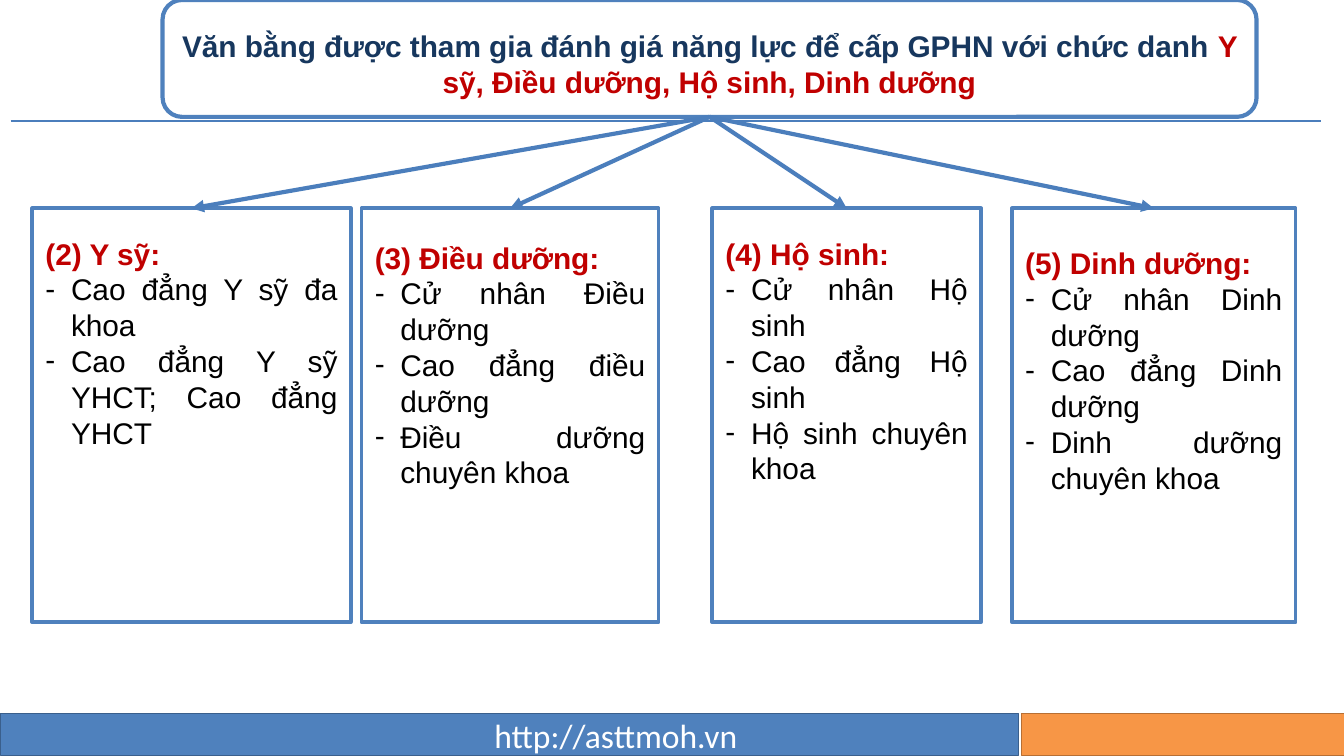
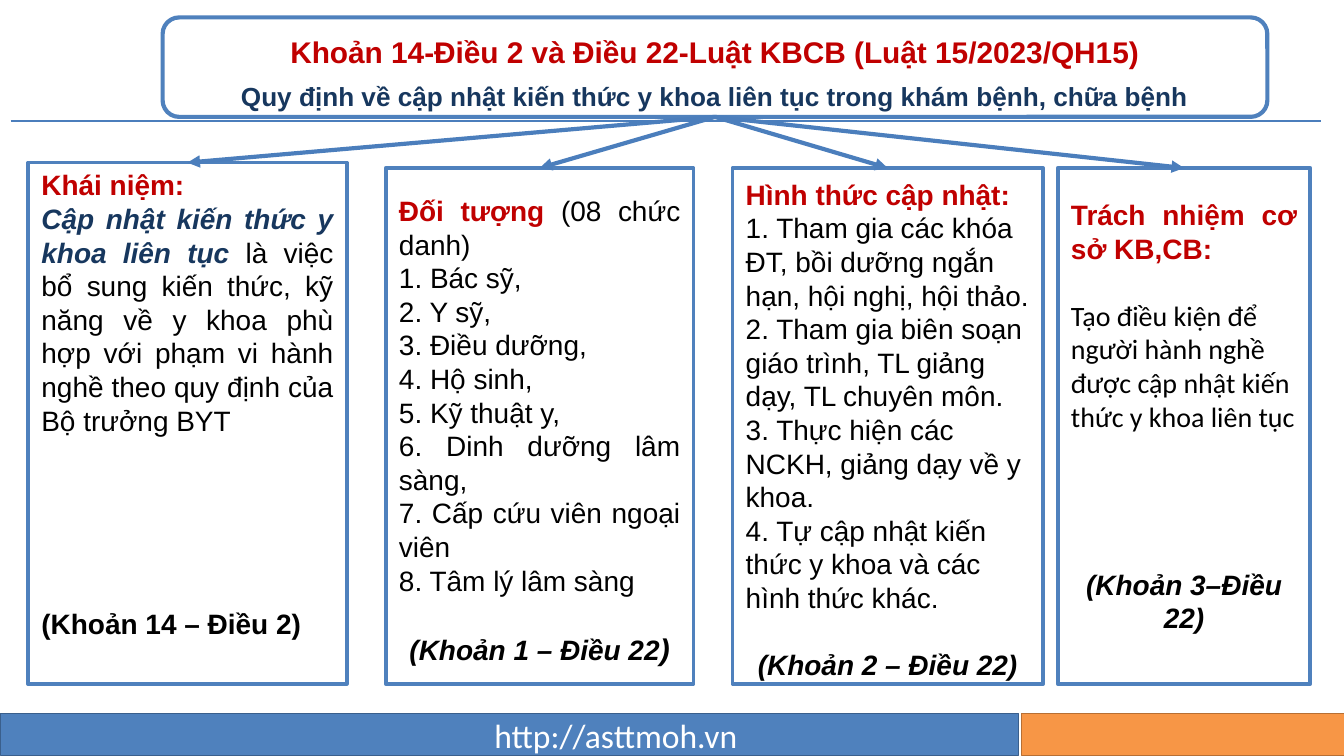
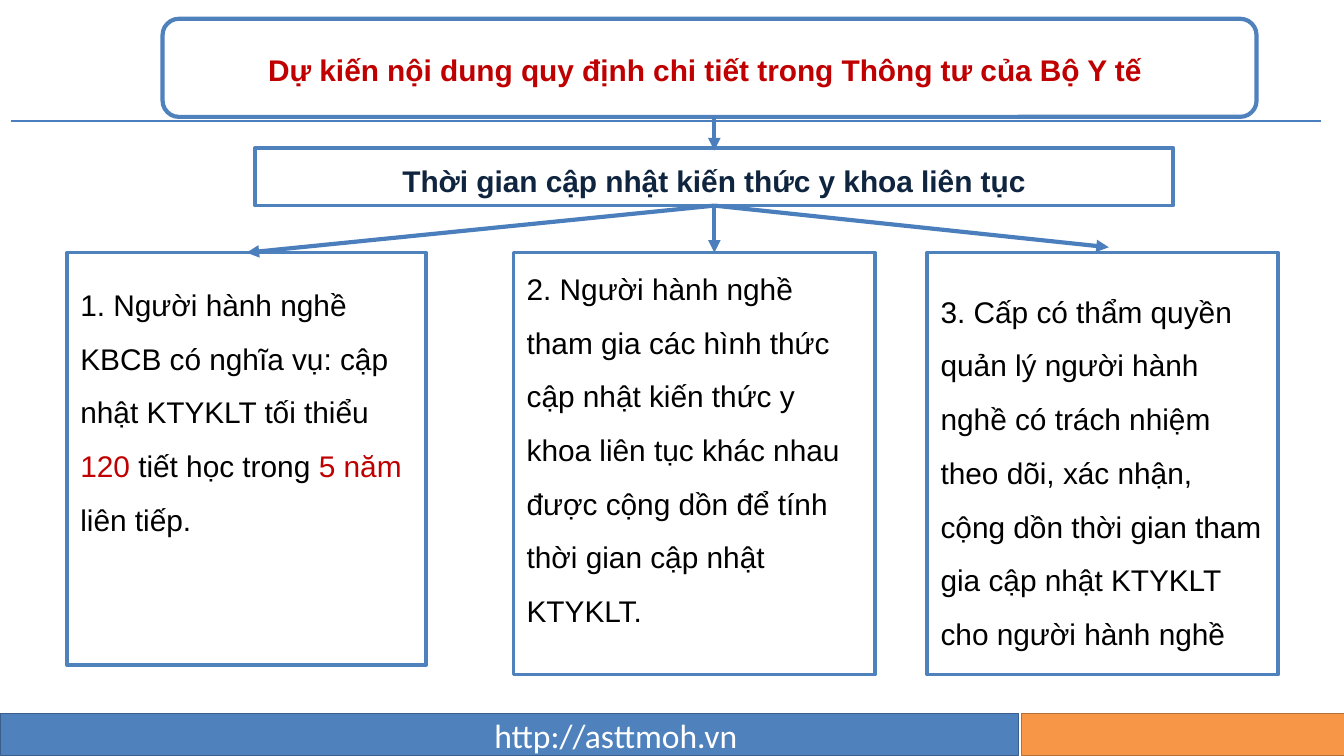
from dataclasses import dataclass
from typing import NamedTuple, Optional

from lxml.etree import SubElement
from pptx import Presentation
from pptx.dml.color import RGBColor
from pptx.enum.shapes import MSO_CONNECTOR as Connector, MSO_SHAPE as Preset
from pptx.enum.text import MSO_ANCHOR as Anchor, PP_ALIGN as Align
from pptx.oxml.ns import qn
from pptx.util import Inches, Pt

# The grid has 100 columns and 56.25 rows of square cells.
COLUMNS, ROWS = 100, 56.25
CELL = Inches(10) / COLUMNS
BLANK_LAYOUT = 6


@dataclass(frozen=True)
class Theme:
    white: str = "FFFFFF"
    black: str = "000000"
    red: str = "C00000"
    navy: str = "17375E"
    deep_navy: str = "0F243E"
    blue: str = "4F81BD"
    blue_edge: str = "3A5F8C"
    orange: str = "F79646"
    orange_edge: str = "B76F34"
    connector: str = "4B7EBC"
    font: str = "Arial"
    plain_font: str = "Calibri"
    title: float = 16
    subtitle: float = 14
    dense: float = 15
    footer: float = 18
    hairline: float = 0.25
    rule: float = 1.5
    card_edge: float = 2
    heavy: float = 2.25
    hanging: float = 0.19


THEME = Theme()


class Box(NamedTuple):
    left: float
    top: float
    width: float
    height: float

    @property
    def center(self):
        return self.left + self.width / 2

    @property
    def bottom(self):
        return self.top + self.height

    def lengths(self):
        return [cells(value) for value in self]


@dataclass(frozen=True)
class Run:
    text: str
    color: str = THEME.black
    bold: bool = False
    italic: bool = False
    size: Optional[float] = None
    font: str = THEME.font


@dataclass(frozen=True)
class Para:
    runs: tuple
    align: Align = Align.LEFT
    before: float = 0
    spacing: Optional[float] = None
    bullet: bool = False


@dataclass(frozen=True)
class Card:
    """A framed text; inset is in rows, target is where its arrow ends."""
    box: Box
    paragraphs: list
    inset: float
    target: Optional[tuple] = None


def cells(count):
    return round(count * CELL)


def para(*runs, **options):
    return Para(tuple(Run(run) if isinstance(run, str) else run for run in runs), **options)


def justified(*runs, **options):
    return para(*runs, align=Align.JUSTIFY, **options)


def centered(*runs, **options):
    return para(*runs, align=Align.CENTER, **options)


def red(text):
    return Run(text, THEME.red, bold=True)


def navy(text, **options):
    return Run(text, THEME.navy, bold=True, **options)


def reference(text):
    return Run(text, bold=True, italic=True)


def add_hyphen(paragraph):
    properties = paragraph._p.get_or_add_pPr()
    properties.set("marL", str(Inches(THEME.hanging)))
    properties.set("indent", str(-Inches(THEME.hanging)))
    SubElement(properties, qn("a:buFont")).set("typeface", THEME.font)
    SubElement(properties, qn("a:buChar")).set("char", "-")


def write(text_frame, paragraphs, size):
    for index, content in enumerate(paragraphs):
        paragraph = text_frame.add_paragraph() if index else text_frame.paragraphs[0]
        paragraph.alignment = content.align
        if content.spacing:
            paragraph.line_spacing = content.spacing
        if content.before:
            paragraph.space_before = Pt(content.before)
        if content.bullet:
            add_hyphen(paragraph)
        for item in content.runs:
            run = paragraph.add_run()
            run.text = item.text
            font = run.font
            font.name, font.size = item.font, Pt(item.size or size)
            font.bold, font.italic = item.bold, item.italic
            font.color.rgb = RGBColor.from_string(item.color)


def add_panel(slide, box, fill, edge, weight, preset=Preset.RECTANGLE):
    shape = slide.shapes.add_shape(preset, *box.lengths())
    shape.shadow.inherit = False
    shape.fill.solid()
    shape.fill.fore_color.rgb = RGBColor.from_string(fill)
    shape.line.color.rgb = RGBColor.from_string(edge)
    shape.line.width = Pt(weight)
    return shape


def add_line(slide, start, end, weight, arrow=False):
    points = [cells(value) for value in (*start, *end)]
    line = slide.shapes.add_connector(Connector.STRAIGHT, *points)
    line.line.color.rgb = RGBColor.from_string(THEME.connector)
    line.line.width = Pt(weight)
    if arrow:
        SubElement(line.line._get_or_add_ln(), qn("a:tailEnd")).set("type", "triangle")
    SubElement(line._element.spPr, qn("a:effectLst"))


def add_arrow(slide, start, end):
    add_line(slide, start, end, THEME.heavy, arrow=True)


def add_frame(slide):
    """Footer band, web address and the rule under the title."""
    top, height = 53.1, 3.1
    add_panel(slide, Box(0, top, 75.8, height), THEME.blue, THEME.blue_edge, THEME.hairline)
    add_panel(slide, Box(76, top, 24, height), THEME.orange, THEME.orange_edge, THEME.hairline)
    address = slide.shapes.add_textbox(*Box(35.8, 52.7, 20.4, 4).lengths())
    address.text_frame.word_wrap = False
    text = Run("http://asttmoh.vn", THEME.white, font=THEME.plain_font)
    write(address.text_frame, [para(text)], THEME.footer)
    add_line(slide, (0.8, 9), (98.3, 9), THEME.rule)


def add_title(slide, box, paragraphs, inset=1.3):
    title = add_panel(slide, box, THEME.white, THEME.blue, THEME.heavy, Preset.ROUNDED_RECTANGLE)
    frame = title.text_frame
    frame.word_wrap = True
    frame.vertical_anchor = Anchor.MIDDLE
    frame.margin_top = cells(inset)
    write(frame, paragraphs, THEME.title)


def add_topic(slide, box, text):
    topic = add_panel(slide, box, THEME.white, THEME.blue, THEME.card_edge)
    frame = topic.text_frame
    frame.word_wrap = True
    frame.vertical_anchor = Anchor.MIDDLE
    frame.margin_top, frame.margin_bottom = cells(0.6), 0
    write(frame, [centered(Run(text, THEME.deep_navy, bold=True))], THEME.title)


def add_cards(slide, cards, origin, size):
    """Cards, each with an arrow coming from origin."""
    for card in cards:
        shape = add_panel(slide, card.box, THEME.white, THEME.blue, THEME.card_edge)
        frame = shape.text_frame
        frame.word_wrap = True
        frame.vertical_anchor = Anchor.TOP
        frame.margin_top = cells(card.inset)
        write(frame, card.paragraphs, size)
    for card in cards:
        add_arrow(slide, origin, card.target or (card.box.center, card.box.top))


def new_slide(presentation):
    slide = presentation.slides.add_slide(presentation.slide_layouts[BLANK_LAYOUT])
    add_frame(slide)
    return slide


def build_diplomas(presentation):
    slide = new_slide(presentation)
    title = Box(12.1, 0, 81.4, 8.7)
    add_title(slide, title, [centered(
        navy("Văn bằng được tham gia đánh giá năng lực để cấp GPHN với chức danh "),
        red("Y sỹ, Điều dưỡng, Hộ sinh, Dinh dưỡng"))])
    roles = [
        (2.4, 23.7, 2, "(2) Y sỹ:",
         ["Cao đẳng Y sỹ đa khoa", "Cao đẳng Y sỹ YHCT; Cao đẳng YHCT"]),
        (26.9, 22.1, 2.3, "(3) Điều dưỡng:",
         ["Cử nhân Điều dưỡng", "Cao đẳng điều dưỡng", "Điều dưỡng chuyên khoa"]),
        (53, 20, 2, "(4) Hộ sinh:",
         ["Cử nhân Hộ sinh", "Cao đẳng Hộ sinh", "Hộ sinh chuyên khoa"]),
        (75.3, 21.1, 2.7, "(5) Dinh dưỡng:",
         ["Cử nhân Dinh dưỡng", "Cao đẳng Dinh dưỡng", "Dinh dưỡng chuyên khoa"]),
    ]
    cards = [
        Card(Box(left, 15.5, width, 30.8),
             [justified(red(role))] + [justified(item, bullet=True) for item in diplomas],
             inset)
        for left, width, inset, role, diplomas in roles]
    add_cards(slide, cards, (title.center, title.bottom), THEME.title)


def build_continuing_education(presentation):
    slide = new_slide(presentation)
    title = Box(12.1, 1.3, 82.2, 7.4)
    add_title(slide, title, [
        centered(red("Khoản 14-Điều 2 và Điều 22-Luật KBCB (Luật 15/2023/QH15)")),
        centered(navy("Quy định về cập nhật kiến thức y khoa liên tục trong khám bệnh, chữa bệnh",
                      size=THEME.subtitle), before=6)])
    concept = [
        justified(red("Khái niệm:")),
        justified(navy("Cập nhật kiến thức y khoa liên tục ", italic=True),
                  "là việc bổ sung kiến thức, kỹ năng về y khoa phù hợp với phạm vi hành nghề "
                  "theo quy định của Bộ trưởng BYT"),
        justified(Run("(Khoản 14 – Điều 2)", bold=True), before=91),
    ]
    professions = ["Bác sỹ,", "Y sỹ,", "Điều dưỡng,", "Hộ sinh,", "Kỹ thuật y,",
                   "Dinh dưỡng lâm sàng,", "Cấp cứu viên ngoại viên", "Tâm lý lâm sàng"]
    subjects = [
        justified(red("Đối tượng "), "(08 chức danh)"),
        *[justified(f"{number}. {name}") for number, name in enumerate(professions, 1)],
        centered(reference("(Khoản 1 – Điều 22"),
                 Run(")", bold=True, italic=True, size=THEME.title), before=18),
    ]
    activities = ["Tham gia các khóa ĐT, bồi dưỡng ngắn hạn, hội nghị, hội thảo.",
                  "Tham gia biên soạn giáo trình, TL giảng dạy, TL chuyên môn.",
                  "Thực hiện các NCKH, giảng dạy về y khoa.",
                  "Tự cập nhật kiến thức y khoa và các hình thức khác."]
    forms = [
        justified(red("Hình thức cập nhật:")),
        *[para(f"{number}. {activity}") for number, activity in enumerate(activities, 1)],
        centered(reference("(Khoản 2 – Điều 22)"), before=18),
    ]
    duties = [
        justified(red("Trách nhiệm cơ sở KB,CB:")),
        para(Run("Tạo điều kiện để người hành nghề được cập nhật kiến thức y khoa liên tục",
                 font=THEME.plain_font), before=18),
        centered(reference("(Khoản 3–Điều 22)"), before=72),
    ]
    top, height = 12.5, 38.4
    cards = [
        Card(Box(2.1, 12.1, 23.7, 38.8), concept, 0.4),
        Card(Box(28.7, top, 22.9, height), subjects, 1.9),
        Card(Box(54.5, top, 23.1, height), forms, 0.7),
        Card(Box(78.7, top, 18.8, height), duties, 2.2),
    ]
    add_cards(slide, cards, (title.center, title.bottom), THEME.dense)


def build_update_time(presentation):
    slide = new_slide(presentation)
    title = Box(12.1, 1.4, 81.4, 7.3)
    add_title(slide, title, [centered(
        red("Dự kiến nội dung quy định chi tiết trong Thông tư của Bộ Y tế "))], inset=0.8)
    topic = Box(19, 11, 68.3, 4.3)
    add_topic(slide, topic, "Thời gian cập nhật kiến thức y khoa liên tục")
    add_arrow(slide, (topic.center, title.bottom), (topic.center, topic.top + 0.2))

    top = 18.8
    duty = para("1. Người hành nghề KBCB có nghĩa vụ: cập nhật KTYKLT tối thiểu ",
                Run("120", THEME.red), " tiết học trong ", Run("5 năm ", THEME.red),
                "liên tiếp.", spacing=1.5)
    total = para("2. Người hành nghề tham gia các hình thức cập nhật kiến thức y khoa liên tục "
                 "khác nhau được cộng dồn để tính thời gian cập nhật KTYKLT.", spacing=1.5)
    oversight = para("3. Cấp có thẩm quyền quản lý người hành nghề có trách nhiệm theo dõi, "
                     "xác nhận, cộng dồn thời gian tham gia cập nhật KTYKLT cho người hành nghề",
                     spacing=1.5)
    cards = [
        Card(Box(5, top, 26.7, 30.7), [duty], 1.2),
        Card(Box(38.2, top, 26.9, 31.4), [total], 0, target=(topic.center, top)),
        Card(Box(69, top, 26.1, 31.4), [oversight], 1.7, target=(82.5, top - 0.4)),
    ]
    add_cards(slide, cards, (topic.center, topic.bottom), THEME.title)


def main():
    presentation = Presentation()
    presentation.slide_width = cells(COLUMNS)
    presentation.slide_height = cells(ROWS)
    build_diplomas(presentation)
    build_continuing_education(presentation)
    build_update_time(presentation)
    presentation.save("out.pptx")


if __name__ == "__main__":
    main()
